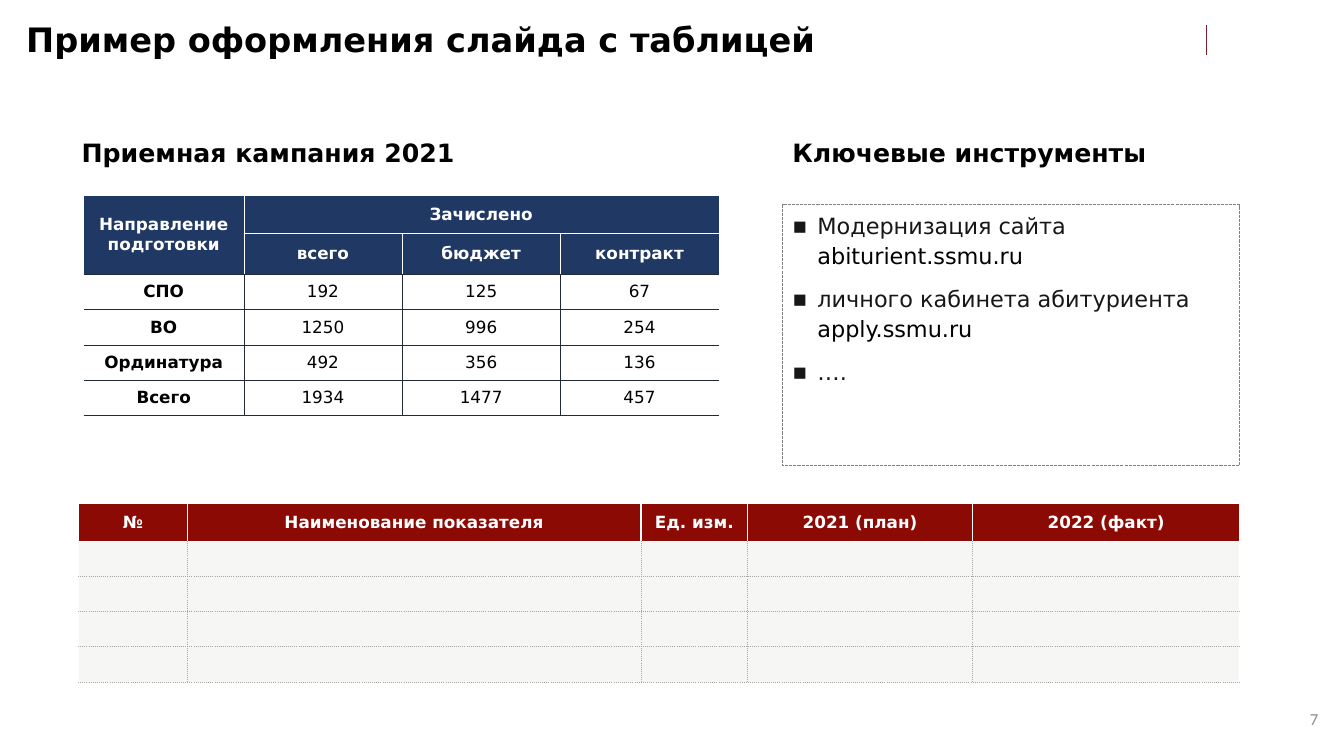
from lxml.etree import SubElement
from pptx import Presentation
from pptx.dml.color import RGBColor
from pptx.enum.dml import MSO_LINE
from pptx.enum.shapes import MSO_CONNECTOR
from pptx.enum.text import MSO_ANCHOR as Anchor, MSO_AUTO_SIZE as AutoSize, PP_ALIGN as Align
from pptx.oxml.ns import qn
from pptx.util import Pt

FONT = "DejaVu Sans"
WHITE, BLACK, INK, NAVY, RED = "FFFFFF", "000000", "181717", "203864", "8B0A04"
THIN_WHITE = (WHITE, 0.25, "solid")
THIN_DARK = ("222A35", 0.25, "solid")
WIDE_WHITE = (WHITE, 1, "solid")
DOTTED = ("A6A6A6", 0.5, "sysDot")

ADMISSIONS = [
    ["Направление подготовки", "Зачислено", "", ""],
    ["", "всего", "бюджет", "контракт"],
    ["СПО", "192", "125", "67"],
    ["ВО", "1250", "996", "254"],
    ["Ординатура", "492", "356", "136"],
    ["Всего", "1934", "1477", "457"],
]
INDICATORS = [["№", "Наименование показателя", "Ед. изм.", "2021 (план)", "2022 (факт)"]]
INDICATORS += [[""] * 5 for _ in range(4)]
TOOLS = [
    [("Модернизация сайта ", INK), ("abiturient.ssmu.ru", BLACK)],
    [("личного кабинета абитуриента ", INK), ("apply.ssmu.ru", BLACK)],
    [("….", INK)],
]


def color(value):
    return RGBColor.from_string(value)


def add_run(para, text, size, fill=BLACK, bold=False, font=FONT):
    span = para.add_run()
    span.text = text
    span.font.name = font
    span.font.size = Pt(size)
    span.font.bold = bold
    span.font.color.rgb = color(fill)


def place(box, left, top, width, height, anchor=Anchor.TOP):
    box.left, box.top, box.width, box.height = Pt(left), Pt(top), Pt(width), Pt(height)
    frame = box.text_frame
    frame.word_wrap = True
    frame.auto_size = AutoSize.NONE
    frame.vertical_anchor = anchor
    return frame


def fill_heading(box, text, size, bounds, anchor=Anchor.TOP):
    para = place(box, *bounds, anchor).paragraphs[0]
    para.alignment = Align.LEFT
    para.line_spacing = 0.9
    para.space_before = Pt(0)
    add_run(para, text, size, bold=True)


def add_bullet(para):
    props = para._p.get_or_add_pPr()
    props.set("marL", str(Pt(18)))
    props.set("indent", str(-Pt(18)))
    SubElement(props, qn("a:buFont"), typeface=FONT)
    SubElement(props, qn("a:buChar"), char="▪")


def fill_list(box, items, bounds):
    frame = place(box, *bounds)
    box.line.color.rgb = color("808080")
    box.line.width = Pt(0.75)
    box.line.dash_style = MSO_LINE.SQUARE_DOT
    box.line._get_or_add_ln().find(qn("a:prstDash")).set("val", "sysDash")
    for index, item in enumerate(items):
        para = frame.add_paragraph() if index else frame.paragraphs[0]
        add_bullet(para)
        para.line_spacing = 1.1
        para.space_before = Pt(10 if index else 0)
        for text, fill in item:
            add_run(para, text, 16, fill)


def add_rule(page, x, top, bottom):
    rule = page.shapes.add_connector(MSO_CONNECTOR.STRAIGHT, Pt(x), Pt(top), Pt(x), Pt(bottom))
    rule.line.color.rgb = color("7C222E")
    rule.line.width = Pt(0.75)
    SubElement(rule._element.spPr, qn("a:effectLst"))


def add_page_number(page, text):
    box = page.shapes.add_textbox(0, 0, 0, 0)
    para = place(box, 890.6, 499, 58.3, 28.8, Anchor.MIDDLE).paragraphs[0]
    para.alignment = Align.RIGHT
    add_run(para, text, 12, "8C8C8C", font="Calibri")


def set_border(cell, side, border):
    props = cell._tc.get_or_add_tcPr()
    if border is None:
        SubElement(SubElement(props, qn(f"a:ln{side}"), w="0"), qn("a:noFill"))
        return
    fill, width, dash = border
    line = SubElement(props, qn(f"a:ln{side}"), w=str(Pt(width)))
    SubElement(SubElement(line, qn("a:solidFill")), qn("a:srgbClr"), val=fill)
    SubElement(line, qn("a:prstDash"), val=dash)


def admissions_border(side, row, col):
    if (side, col) in (("L", 0), ("R", 3)) or (side, row) == ("T", 0):
        return None
    if side == "B" and (row == 1 or col == 0):
        return THIN_DARK
    return THIN_WHITE if row < 2 else THIN_DARK


def indicators_border(side, row, col):
    outer = (side, col) in (("L", 0), ("R", 4))
    return WIDE_WHITE if row == 0 or outer or (side, row) == ("T", 1) else DOTTED


def add_grid(page, values, left, top, widths, heights, margins, border_rule, style_rule):
    table = page.shapes.add_table(
        len(heights), len(widths), Pt(left), Pt(top), Pt(sum(widths)), Pt(sum(heights))
    ).table
    table.first_row = table.horz_banding = False
    for column, width in zip(table.columns, widths):
        column.width = Pt(width)
    for line, height in zip(table.rows, heights):
        line.height = Pt(height)
    for row, texts in enumerate(values):
        for col, text in enumerate(texts):
            cell = table.cell(row, col)
            fill, ink, bold = style_rule(row, col)
            for side in "LRTB":
                set_border(cell, side, border_rule(side, row, col))
            if fill:
                cell.fill.solid()
                cell.fill.fore_color.rgb = color(fill)
            else:
                cell.fill.background()
            cell.vertical_anchor = Anchor.MIDDLE
            cell.margin_left = cell.margin_right = Pt(margins[0])
            cell.margin_top = cell.margin_bottom = Pt(margins[1])
            para = cell.text_frame.paragraphs[0]
            para.alignment = Align.CENTER
            if text:
                add_run(para, text, 12, ink, bold)
            else:
                SubElement(para._p, qn("a:endParaRPr"), sz="1200")
    return table


def admissions_style(row, col):
    return (NAVY, WHITE, True) if row < 2 else (None, BLACK, col == 0)


def indicators_style(row, col):
    return (RED, WHITE, True) if row == 0 else ("F6F6F4", BLACK, False)


def main():
    deck = Presentation()
    deck.slide_width, deck.slide_height = Pt(960), Pt(540)
    page = deck.slides.add_slide(deck.slide_layouts.get_by_name("Comparison"))
    title, left_heading, spare, right_heading, tools = page.placeholders
    spare._element.getparent().remove(spare._element)

    add_rule(page, 861.8, 18, 39.6)
    fill_heading(title, "Пример оформления слайда с таблицей", 24,
                 (11.5, 10, 818.6, 39.6), Anchor.MIDDLE)
    fill_heading(left_heading, "Приемная кампания 2021", 18, (51.1, 97.2, 462.2, 29.5))
    fill_heading(right_heading, "Ключевые инструменты", 18, (558.7, 97.2, 326.9, 29.5))
    fill_list(tools, TOOLS, (558.7, 146.2, 326.9, 186.5))

    admissions = add_grid(page, ADMISSIONS, 59.8, 139.7, [114.3] + [113.1] * 3,
                          [27, 29.3] + [25.2] * 4, (0.7, 0.4),
                          admissions_border, admissions_style)
    admissions.cell(0, 0).merge(admissions.cell(1, 0))
    admissions.cell(0, 1).merge(admissions.cell(0, 3))
    add_grid(page, INDICATORS, 56.2, 359.6, [77.6, 324, 76.3, 160.6, 191],
             [27.1] + [25.1] * 4, (5.8, 2.9), indicators_border, indicators_style)
    add_page_number(page, "7")
    deck.save("out.pptx")


if __name__ == "__main__":
    main()
